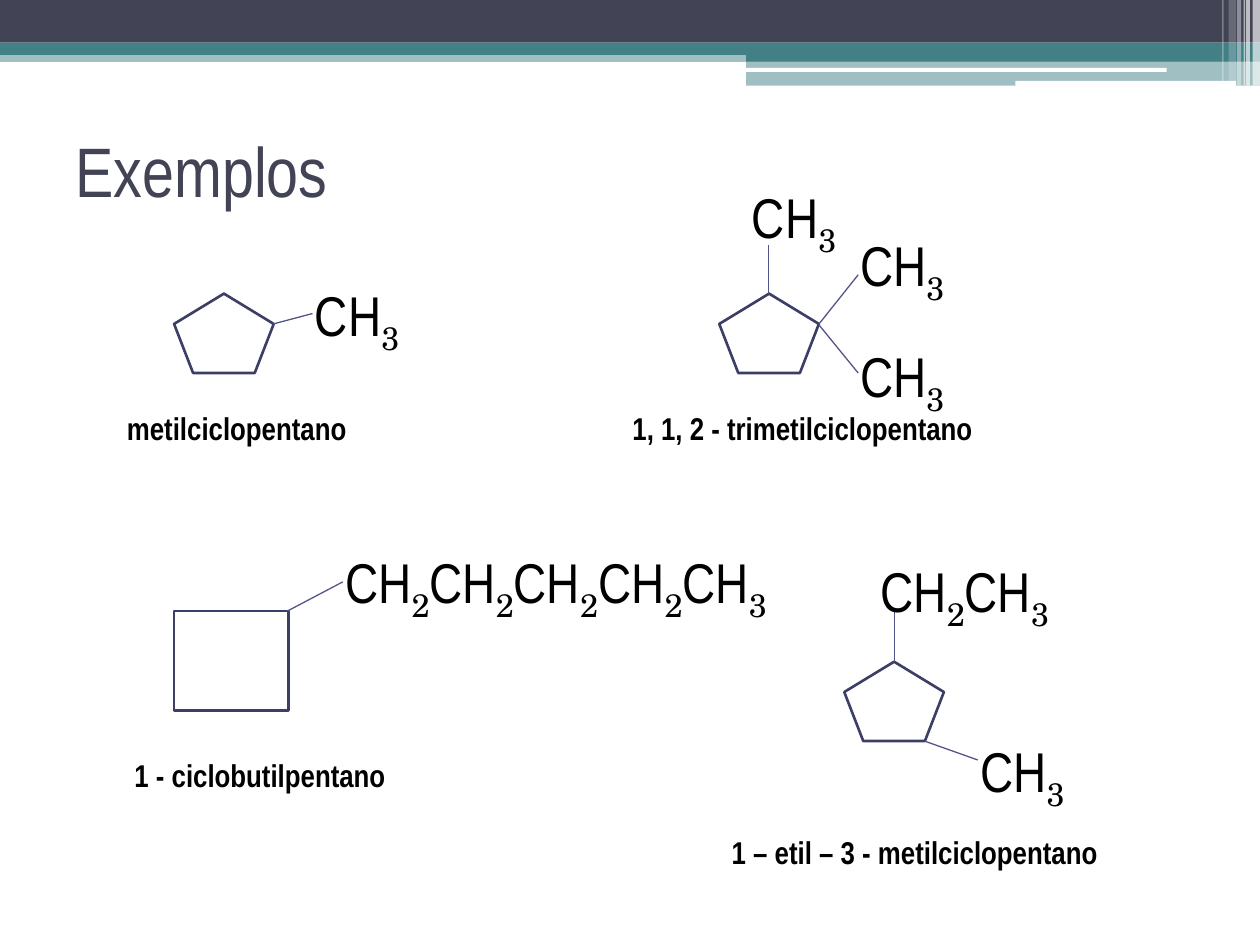
from itertools import groupby

from lxml.etree import SubElement
from pptx import Presentation
from pptx.dml.color import RGBColor
from pptx.enum.shapes import MSO_CONNECTOR, MSO_SHAPE
from pptx.enum.text import MSO_ANCHOR, PP_ALIGN
from pptx.oxml.ns import qn
from pptx.util import Cm, Pt

NAVY = RGBColor(0x42, 0x44, 0x56)
TEAL = RGBColor(0x43, 0x80, 0x86)
WHITE = RGBColor(0xFF, 0xFF, 0xFF)
BLACK = RGBColor(0, 0, 0)
RING = RGBColor(0x3D, 0x3E, 0x66)
BOND = RGBColor(0x53, 0x54, 0x8A)
MAIN_FONT = "Arial Narrow"
DIGIT_FONT = "TeX Gyre Schola"

presentation = Presentation()
presentation.slide_width = Cm(25.4)
presentation.slide_height = Cm(19.05)
slide = presentation.slides.add_slide(presentation.slide_layouts[5])


def write_text(shape, text, size=18, color=BLACK, bold=False, formula=False,
               anchor=MSO_ANCHOR.TOP):
    """Write one left-aligned line; in a formula the digits are subscripts."""
    frame = shape.text_frame
    frame.word_wrap = True
    frame.vertical_anchor = anchor
    paragraph = frame.paragraphs[0]
    paragraph.alignment = PP_ALIGN.LEFT
    parts = groupby(text, str.isdigit) if formula else [(False, text)]
    for subscript, letters in parts:
        run = paragraph.add_run()
        run.text = "".join(letters)
        run.font.name = DIGIT_FONT if subscript else MAIN_FONT
        run.font.size = Pt(size)
        run.font.bold = bold
        run.font.color.rgb = color
        if subscript:
            run.font._element.set("baseline", "-25000")


def add_figure(kind, left, top, width, height, fill=None, opacity=100):
    """Add a filled bar, or an outlined ring when there is no fill."""
    shape = slide.shapes.add_shape(kind, Cm(left), Cm(top), Cm(width), Cm(height))
    shape.shadow.inherit = False
    if fill is None:
        shape.fill.background()
        shape.line.color.rgb = RING
        shape.line.width = Pt(1.5)
        return
    shape.line.fill.background()
    shape.fill.solid()
    shape.fill.fore_color.rgb = fill
    if opacity < 100:
        color = shape._element.spPr.find(qn("a:solidFill"))[0]
        SubElement(color, qn("a:alpha")).set("val", str(opacity * 1000))


# Header bars
for left, top, width, height, fill, opacity in [
    (0, 1.02, 25.4, 0.23, TEAL, 50),
    (0, 0, 25.4, 0.86, NAVY, 100),
    (0, 0.86, 25.4, 0.25, TEAL, 100),
    (15.04, 0.99, 10.36, 0.25, TEAL, 100),
    (15.04, 1.22, 10.36, 0.51, TEAL, 50),
]:
    add_figure(MSO_SHAPE.RECTANGLE, left, top, width, height, fill, opacity)

for left, top, width, height in [(15.01, 1.37, 8.51, 0.08), (20.47, 1.63, 4.45, 0.1)]:
    add_figure(MSO_SHAPE.ROUNDED_RECTANGLE, left, top, width, height, WHITE)

# Translucent stripes at the right end of the header
for left, width, height, opacity in [
    (25.25, 0.15, 1.73, 65),
    (25.12, 0.08, 1.73, 65),
    (25.07, 0.03, 1.73, 60),
    (24.94, 0.08, 1.73, 40),
    (24.77, 0.15, 1.63, 20),
    (24.64, 0.03, 1.63, 30),
]:
    add_figure(MSO_SHAPE.RECTANGLE, left, 0, width, height, WHITE, opacity)

# Title
title = slide.shapes.title
title.left, title.top, title.width, title.height = Cm(1.27), Cm(1.93), Cm(22.86), Cm(2.97)
write_text(title, "Exemplos", size=40, color=NAVY, anchor=MSO_ANCHOR.MIDDLE)

# Carbon rings
for left, top in [(3.51, 5.92), (14.5, 5.92), (17.02, 13.34)]:
    add_figure(MSO_SHAPE.REGULAR_PENTAGON, left, top, 2.01, 1.6)
add_figure(MSO_SHAPE.RECTANGLE, 3.51, 12.32, 2.31, 2.01)

# Bonds from the rings to the radicals
for start_x, start_y, end_x, end_y in [
    (5.51, 6.53, 6.3, 6.32),
    (16.51, 6.53, 17.3, 5.54),
    (16.51, 6.55, 17.3, 7.52),
    (15.49, 5.92, 15.49, 4.93),
    (5.79, 12.32, 6.91, 11.73),
    (18.03, 13.34, 18.03, 12.32),
    (18.64, 14.94, 19.71, 15.32),
]:
    bond = slide.shapes.add_connector(
        MSO_CONNECTOR.STRAIGHT, Cm(start_x), Cm(start_y), Cm(end_x), Cm(end_y))
    bond.line.color.rgb = BOND
    bond.line.width = Pt(0.75)
    SubElement(bond._element.spPr, qn("a:effectLst"))

# Radicals
for text, left, top, width, height in [
    ("CH3", 6.1, 5.54, 2.59, 3),
    ("CH3", 17.09, 6.76, 2.59, 3),
    ("CH3", 17.09, 4.52, 2.59, 3),
    ("CH3", 14.91, 3.56, 2.59, 3),
    ("CH2CH2CH2CH2CH3", 6.71, 10.92, 10.01, 7.09),
    ("CH3", 19.51, 14.73, 2.59, 3),
    ("CH2CH3", 17.5, 11.1, 8.13, 1.63),
]:
    radical = slide.shapes.add_textbox(Cm(left), Cm(top), Cm(width), Cm(height))
    write_text(radical, text, size=32, formula=True)

# Compound names
for text, left, top, width in [
    ("metilciclopentano", 2.31, 8.13, 7.01),
    ("1, 1, 2 - trimetilciclopentano", 12.5, 8.13, 8),
    ("1 - ciclobutilpentano", 2.46, 15.11, 7.01),
    ("1 – etil – 3 - metilciclopentano", 14.5, 16.66, 9.19),
]:
    name = slide.shapes.add_textbox(Cm(left), Cm(top), Cm(width), Cm(1.02))
    write_text(name, text, bold=True)

presentation.save("out.pptx")
